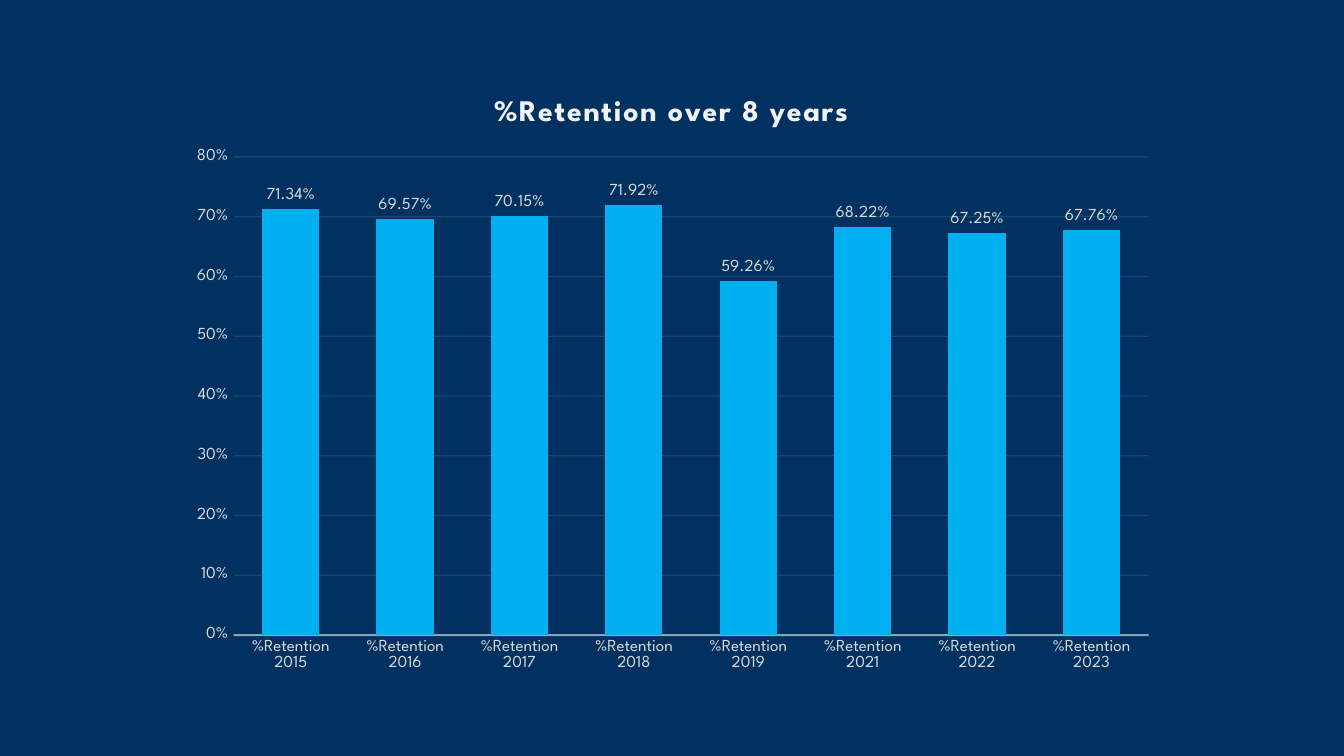
"""Build a slide with one column chart of yearly retention rates."""
from dataclasses import dataclass

import pptx
import pptx.chart.data
import pptx.dml.color
import pptx.enum.chart
import pptx.oxml
import pptx.oxml.ns
import pptx.util

COLORS = {"background": "003160", "bar": "00B0F0", "label": "D9D9D9", "light": "F2F2F2"}
FONT = "League Spartan"
WIDTH = pptx.util.Inches(10)
HEIGHT = WIDTH * 9 // 16


@dataclass(frozen=True)
class Box:
    """Position and size in percent of the enclosing area."""
    x: float
    y: float
    w: float
    h: float


@dataclass(frozen=True)
class Year:
    """Retention rate of one year."""
    year: int
    rate: float


CHART_BOX = Box(13.1, 9.6, 73.7, 80.9)
PLOT_BOX = Box(5.8, 13.8, 92.4, 78.2)
YEARS = [
    Year(2015, 0.7134), Year(2016, 0.6957), Year(2017, 0.7015), Year(2018, 0.7192),
    Year(2019, 0.5926), Year(2021, 0.6822), Year(2022, 0.6725), Year(2023, 0.6776),
]


def rgb(name: str) -> pptx.dml.color.RGBColor:
    """Return a named colour."""
    return pptx.dml.color.RGBColor.from_string(COLORS[name])


def style_font(font, size: float, color: str, bold: bool = False) -> None:
    """Set typeface, size, colour and weight."""
    font.name, font.size, font.bold = FONT, pptx.util.Pt(size), bold
    font.color.rgb = rgb(color)


def style_line(line, width: float, opacity: int) -> None:
    """Draw a translucent light line, with opacity in percent."""
    line.width = pptx.util.Pt(width)
    line.fill.solid()
    line.fill.fore_color.rgb = rgb("light")
    color = line._ln.find(".//" + pptx.oxml.ns.qn("a:srgbClr"))
    alpha = pptx.oxml.parse_xml(f'<a:alpha {pptx.oxml.ns.nsdecls("a")} val="{opacity * 1000}"/>')
    color.append(alpha)


def place_plot(chart, box: Box) -> None:
    """Fix the inner plot area inside the chart."""
    plot_area = chart._chartSpace.chart.plotArea
    for layout in plot_area.findall(pptx.oxml.ns.qn("c:layout")):
        plot_area.remove(layout)
    shares = "".join(f'<c:{side} val="{getattr(box, side) / 100:.3f}"/>' for side in "xywh")
    plot_area.insert(0, pptx.oxml.parse_xml(
        f'<c:layout {pptx.oxml.ns.nsdecls("c")}><c:manualLayout>'
        '<c:layoutTarget val="inner"/><c:xMode val="edge"/><c:yMode val="edge"/>'
        f'{shares}</c:manualLayout></c:layout>'))


def style_axes(chart) -> None:
    """Format both axes and the gridlines."""
    for axis in (chart.category_axis, chart.value_axis):
        axis.major_tick_mark = pptx.enum.chart.XL_TICK_MARK.NONE
        axis.minor_tick_mark = pptx.enum.chart.XL_TICK_MARK.NONE
        style_font(axis.tick_labels.font, 9, "label")
    style_line(chart.category_axis.format.line, 1, 54)
    rates = chart.value_axis
    rates.minimum_scale, rates.maximum_scale, rates.major_unit = 0, 0.8, 0.1
    rates.tick_labels.number_format = "0%"
    rates.tick_labels.number_format_is_linked = False
    rates.format.line.fill.background()
    rates.has_major_gridlines = True
    style_line(rates.major_gridlines.format.line, 0.75, 10)


def style_columns(plot) -> None:
    """Format the columns and their value labels."""
    plot.gap_width, plot.overlap, plot.vary_by_categories = 100, -24, False
    retention = plot.series[0]
    retention.format.fill.solid()
    retention.format.fill.fore_color.rgb = rgb("bar")
    labels = retention.data_labels
    labels.show_value = True
    labels.number_format, labels.number_format_is_linked = "0.00%", False
    labels.position = pptx.enum.chart.XL_LABEL_POSITION.OUTSIDE_END
    style_font(labels.font, 9, "label")


def add_heading(chart, text: str) -> None:
    """Give the chart a letter-spaced title."""
    chart.has_title = True
    heading = chart.chart_title.text_frame.paragraphs[0].add_run()
    heading.text = text
    style_font(heading.font, 16, "light", bold=True)
    heading.font._element.set("spc", "100")
    chart.chart_title.include_in_layout = False


def add_retention_chart(slide, box: Box, years: list[Year]) -> None:
    """Add the whole retention chart."""
    data = pptx.chart.data.CategoryChartData(number_format="0.00%")
    data.categories = [f"%Retention {entry.year}" for entry in years]
    data.add_series("Series 1", [entry.rate for entry in years])
    left, width = (int(share * WIDTH / 100) for share in (box.x, box.w))
    top, height = (int(share * HEIGHT / 100) for share in (box.y, box.h))
    chart = slide.shapes.add_chart(
        pptx.enum.chart.XL_CHART_TYPE.COLUMN_CLUSTERED, left, top, width, height, data,
    ).chart
    chart.font.name, chart.font.size = "Calibri", pptx.util.Pt(10)
    chart.has_legend = False
    add_heading(chart, "%Retention over 8 years")
    style_axes(chart)
    style_columns(chart.plots[0])
    place_plot(chart, PLOT_BOX)


def main() -> None:
    """Create and save the presentation."""
    deck = pptx.Presentation()
    deck.slide_width, deck.slide_height = WIDTH, HEIGHT
    slide = deck.slides.add_slide(deck.slide_layouts[6])
    slide.background.fill.solid()
    slide.background.fill.fore_color.rgb = rgb("background")
    add_retention_chart(slide, CHART_BOX, YEARS)
    deck.save("out.pptx")


if __name__ == "__main__":
    main()
